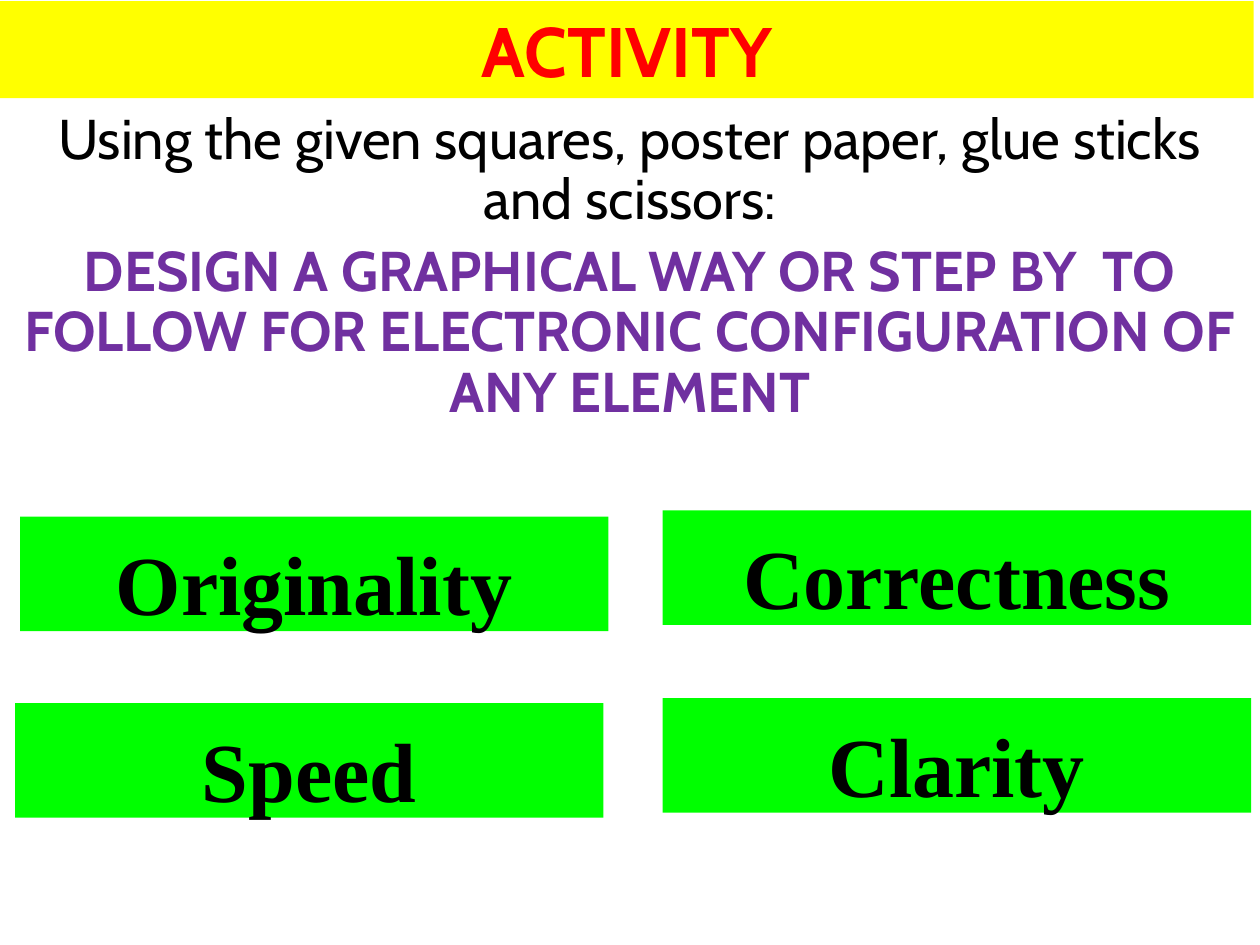
from pptx import Presentation
from pptx.dml.color import RGBColor
from pptx.enum.shapes import MSO_SHAPE
from pptx.enum.text import MSO_ANCHOR, PP_ALIGN
from pptx.util import Inches, Pt

RECT = MSO_SHAPE.RECTANGLE
TOP = MSO_ANCHOR.TOP
CENTER = PP_ALIGN.CENTER

THEME = {
    "title": {"name": "Cabin", "size": 40, "bold": True, "color": "FF0000"},
    "lead": {"name": "Cabin", "size": 32, "bold": False, "color": "000000"},
    "task": {"name": "Cabin", "size": 32, "bold": True, "color": "7030A0"},
    "label": {"name": "Times New Roman", "size": 48, "bold": True, "color": "000000"},
    "banner": "FFFF00",
    "card": "00FF00",
}

TITLE = "ACTIVITY"
BRIEF = [
    ("Using the given squares, poster paper, glue sticks and scissors:", "lead"),
    ("DESIGN A GRAPHICAL WAY OR STEP BY  TO FOLLOW FOR ELECTRONIC "
     "CONFIGURATION OF ANY ELEMENT", "task"),
]
CARDS = [
    ("Originality", 0.16, 4.1),
    ("Correctness", 5.26, 4.05),
    ("Clarity", 5.26, 5.54),
    ("Speed", 0.12, 5.58),
]
CARD_SIZE = (4.67, 0.91)


def style(para, role):
    para.alignment = CENTER
    for key, value in THEME[role].items():
        if key == "color":
            para.font.color.rgb = RGBColor.from_string(value)
        else:
            setattr(para.font, key, Pt(value) if key == "size" else value)


def set_frame(frame, inset):
    values = {"word_wrap": True, "vertical_anchor": TOP, "margin_top": Inches(inset)}
    for key, value in values.items():
        setattr(frame, key, value)


def add_box(slide, text, place, fill, role, inset):
    box = slide.shapes.add_shape(RECT, *map(Inches, place))
    box.shadow.inherit = False
    box.fill.solid()
    box.fill.fore_color.rgb = RGBColor.from_string(THEME[fill])
    box.line.fill.background()
    set_frame(box.text_frame, inset)
    para = box.text_frame.paragraphs[0]
    para.text = text
    style(para, role)


def add_brief(slide):
    frame = slide.shapes.add_textbox(*map(Inches, (0, 0.83, 10, 2.53))).text_frame
    set_frame(frame, 0.05)
    for i, (text, role) in enumerate(BRIEF):
        para = frame.add_paragraph() if i else frame.paragraphs[0]
        para.text = text
        para.line_spacing = 0.9
        if i:
            para.space_before = Pt(6.4)
        style(para, role)


def main():
    deck = Presentation()
    deck.slide_width, deck.slide_height = Inches(10), Inches(7.5)
    slide = deck.slides.add_slide(deck.slide_layouts[6])
    add_box(slide, TITLE, (0, 0.01, 9.95, 0.77), "banner", "title", 0.05)
    add_brief(slide)
    for text, left, top in CARDS:
        add_box(slide, text, (left, top, *CARD_SIZE), "card", "label", 0.12)
    deck.save("out.pptx")


if __name__ == "__main__":
    main()
